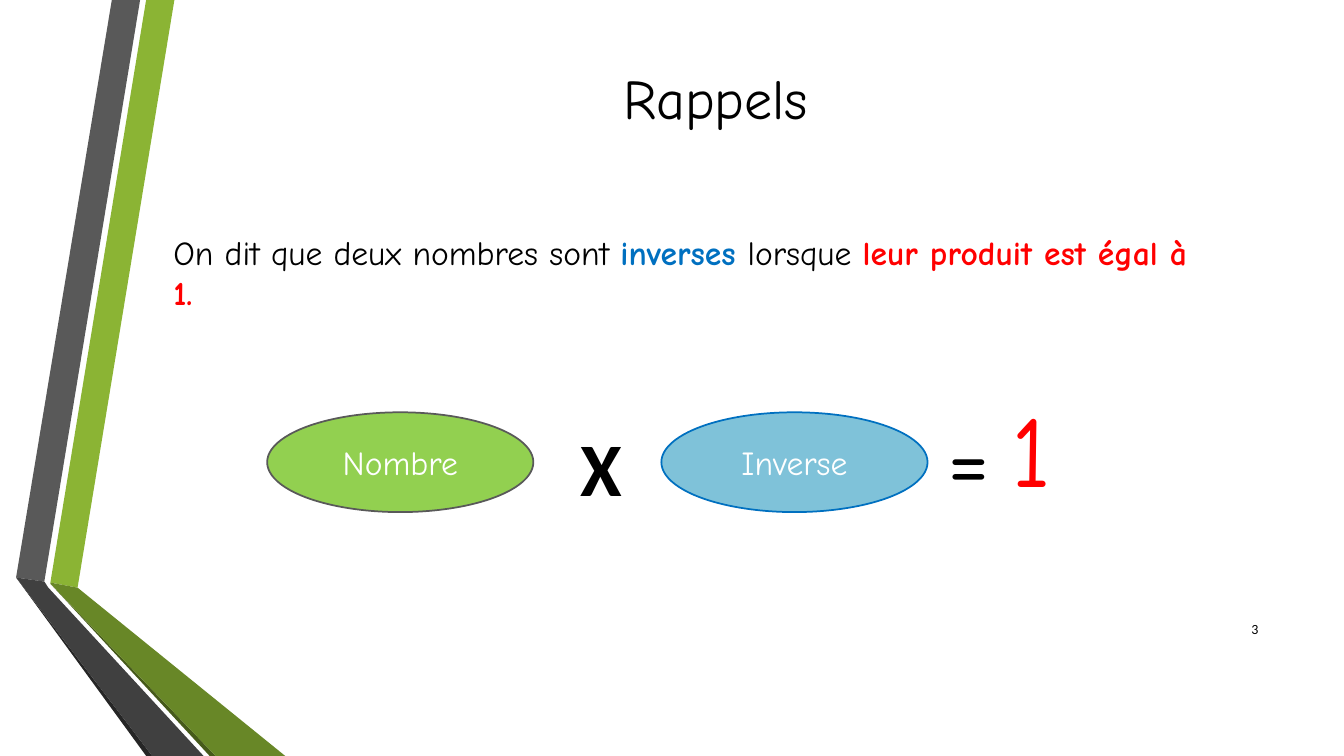
from dataclasses import dataclass

from pptx import Presentation
from pptx.dml.color import RGBColor
from pptx.enum.shapes import MSO_SHAPE
from pptx.enum.text import MSO_ANCHOR, PP_ALIGN
from pptx.slide import Slide
from pptx.text.text import TextFrame
from pptx.util import Emu, Pt

OVAL = MSO_SHAPE.OVAL
TOP, MIDDLE = MSO_ANCHOR.TOP, MSO_ANCHOR.MIDDLE
LEFT, CENTER, RIGHT = PP_ALIGN.LEFT, PP_ALIGN.CENTER, PP_ALIGN.RIGHT
EMU_PER_PX = 9144  # 100 px to the inch


@dataclass(frozen=True)
class Theme:
    hand_font: str = "Comic Neue"
    plain_font: str = "Calibri"
    black: str = "000000"
    white: str = "FFFFFF"
    red: str = "FF0000"
    blue: str = "0070C0"
    light_blue: str = "7FC2D9"
    leaf: str = "92D050"
    green: str = "8BB434"
    green_dark: str = "688727"
    green_edge: str = "465A1A"
    gray: str = "595959"
    gray_dark: str = "404040"
    gray_edge: str = "262626"
    number_size: int = 10
    body_size: int = 24
    title_size: int = 40
    times_size: int = 54
    equals_size: int = 66
    result_size: int = 72
    outline: float = 1.25


THEME = Theme()


@dataclass(frozen=True)
class Box:
    left: int
    top: int
    width: int
    height: int


@dataclass(frozen=True)
class Band:
    color: str
    points: tuple[tuple[int, int], ...]


@dataclass(frozen=True)
class Piece:
    text: str
    color: str = THEME.black
    bold: bool = False


@dataclass(frozen=True)
class Label:
    box: Box
    pieces: tuple[Piece, ...]
    size: int
    font: str = THEME.hand_font
    align: PP_ALIGN = LEFT
    anchor: MSO_ANCHOR = TOP


@dataclass(frozen=True)
class Factor:
    text: str
    left: int
    fill: str
    line: str


BANDS = (
    Band(THEME.green, ((50, 578), (77, 583), (173, 0), (145, 0))),
    Band(THEME.gray, ((139, 0), (111, 0), (16, 573), (44, 577))),
    Band(THEME.gray_edge, ((16, 573), (145, 750), (151, 750))),
    Band(THEME.green_edge, ((50, 579), (208, 750), (214, 750))),
    Band(THEME.green_dark, ((50, 578), (50, 579), (214, 750), (283, 750), (77, 583))),
    Band(THEME.gray_dark, ((16, 573), (151, 750), (202, 750), (48, 583), (44, 577))),
)

DEFINITION = (
    Piece("On dit que deux nombres sont "),
    Piece("inverses ", THEME.blue, True),
    Piece("lorsque "),
    Piece("leur produit est égal à 1.", THEME.red, True),
)

LABELS = (
    Label(Box(162, 0, 1096, 192), (Piece("Rappels"),), THEME.title_size,
          align=CENTER, anchor=MIDDLE),
    Label(Box(1198, 604, 60, 40), (Piece("3"),), THEME.number_size,
          THEME.plain_font, RIGHT, MIDDLE),
    Label(Box(162, 225, 1051, 91), DEFINITION, THEME.body_size),
    Label(Box(566, 413, 90, 101), (Piece("X", bold=True),), THEME.times_size,
          THEME.plain_font),
    Label(Box(930, 392, 47, 121), (Piece("="),), THEME.equals_size),
    Label(Box(993, 379, 47, 131), (Piece("1", THEME.red),), THEME.result_size),
)

FACTORS = (
    Factor("Nombre", 265, THEME.leaf, THEME.gray),
    Factor("Inverse", 656, THEME.light_blue, THEME.blue),
)
FACTOR_TOP, FACTOR_WIDTH, FACTOR_HEIGHT = 409, 264, 99


def px(length: int) -> Emu:
    return Emu(length * EMU_PER_PX)


def rgb(color: str) -> RGBColor:
    return RGBColor.from_string(color)


def place(box: Box) -> tuple[Emu, Emu, Emu, Emu]:
    return px(box.left), px(box.top), px(box.width), px(box.height)


def write(text_frame: TextFrame, label: Label) -> None:
    text_frame.word_wrap = True
    text_frame.vertical_anchor = label.anchor
    paragraph = text_frame.paragraphs[0]
    paragraph.alignment = label.align
    for piece in label.pieces:
        run = paragraph.add_run()
        run.text = piece.text
        run.font.name = label.font
        run.font.size = Pt(label.size)
        run.font.bold = piece.bold
        run.font.color.rgb = rgb(piece.color)


def add_band(slide: Slide, band: Band) -> None:
    start, *others = band.points
    builder = slide.shapes.build_freeform(*start, scale=EMU_PER_PX)
    builder.add_line_segments(others, close=True)
    shape = builder.convert_to_shape()
    shape.shadow.inherit = False
    shape.fill.solid()
    shape.fill.fore_color.rgb = rgb(band.color)
    shape.line.fill.background()


def add_label(slide: Slide, label: Label) -> None:
    write(slide.shapes.add_textbox(*place(label.box)).text_frame, label)


def add_factor(slide: Slide, factor: Factor) -> None:
    box = Box(factor.left, FACTOR_TOP, FACTOR_WIDTH, FACTOR_HEIGHT)
    shape = slide.shapes.add_shape(OVAL, *place(box))
    shape.shadow.inherit = False
    shape.fill.solid()
    shape.fill.fore_color.rgb = rgb(factor.fill)
    shape.line.color.rgb = rgb(factor.line)
    shape.line.width = Pt(THEME.outline)
    write(shape.text_frame, Label(box, (Piece(factor.text, THEME.white),),
                                  THEME.body_size, align=CENTER, anchor=MIDDLE))


def main() -> None:
    presentation = Presentation()
    presentation.slide_width, presentation.slide_height = px(1333), px(750)
    slide = presentation.slides.add_slide(presentation.slide_layouts[6])
    for band in BANDS:
        add_band(slide, band)
    for factor in FACTORS:
        add_factor(slide, factor)
    for label in LABELS:
        add_label(slide, label)
    presentation.save("out.pptx")


if __name__ == "__main__":
    main()
